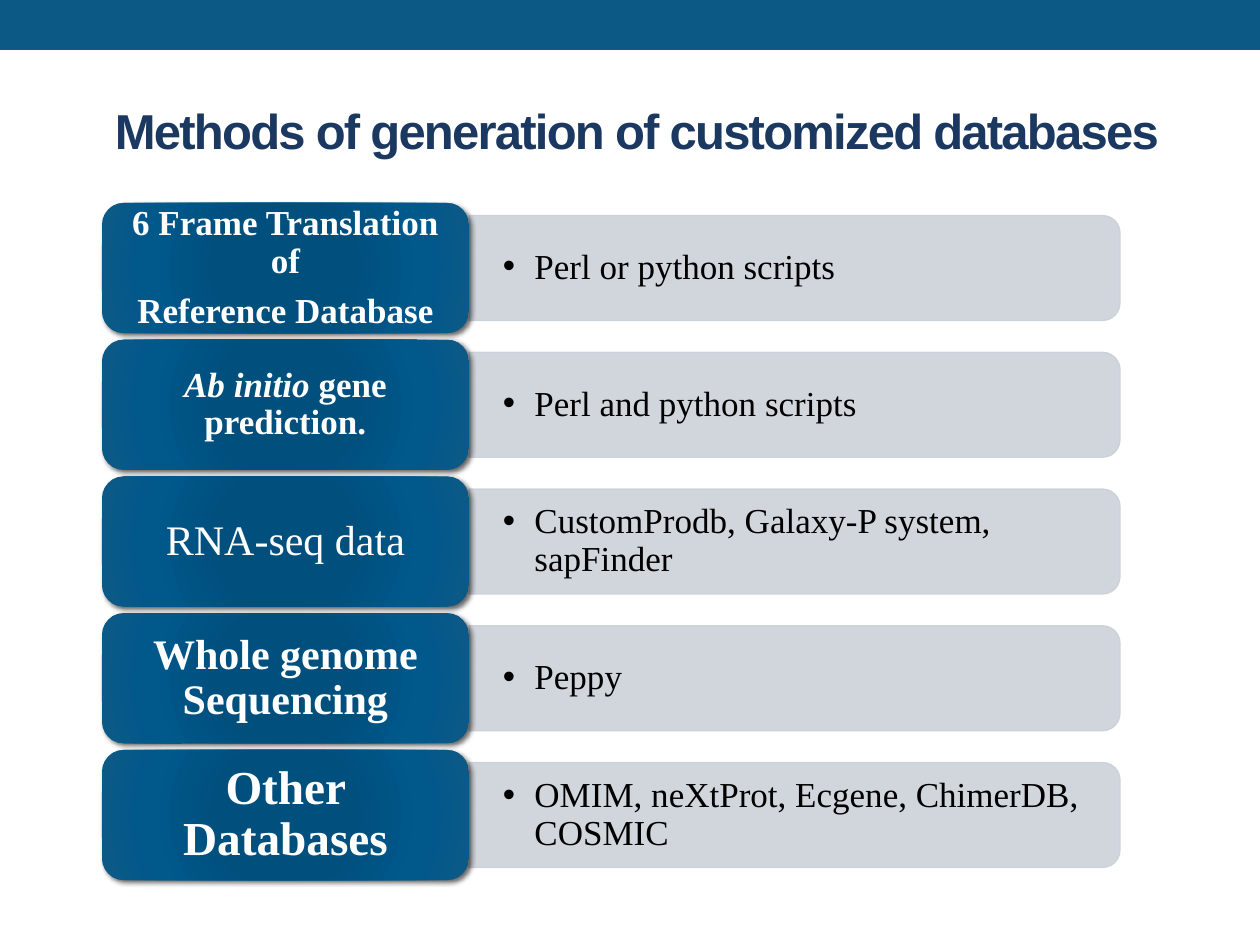
from lxml.etree import SubElement
from pptx import Presentation
from pptx.dml.color import RGBColor
from pptx.enum.shapes import MSO_SHAPE
from pptx.enum.text import MSO_ANCHOR, PP_ALIGN
from pptx.oxml import parse_xml
from pptx.oxml.ns import nsdecls, qn
from pptx.util import Emu, Pt

SCALE = 914400 / 126  # EMU in one px

BAR = RGBColor(0x0C, 0x59, 0x86)
TITLE = RGBColor(0x1B, 0x38, 0x61)
PANEL = RGBColor(0xCC, 0xD1, 0xD9)
WHITE = RGBColor(0xFF, 0xFF, 0xFF)
BLACK = RGBColor(0x00, 0x00, 0x00)
GRADIENT = [
    (0, RGBColor(0x00, 0x4F, 0x7D)),
    (34, RGBColor(0x00, 0x4F, 0x7D)),
    (70, RGBColor(0x00, 0x58, 0x8B)),
    (100, BAR),
]

SERIF = "Times New Roman"
BOLD = {"bold": True}
ITALIC = {"bold": True, "italic": True}
PLAIN = {}

# Row layout
LEFT, FIRST_TOP, ROW_PITCH = 102, 203, 136.75
LABEL_WIDTH, LABEL_HEIGHT = 367, 130
PANEL_WIDTH, PANEL_HEIGHT = 651, 105
PANEL_TEXT_WIDTH, PANEL_TEXT_HEIGHT = 646, 95

# Label size, label paragraphs as (text, format) runs, panel text
ROWS = [
    (20, [[("6 Frame Translation of", BOLD)], [("Reference Database", BOLD)]],
     "Perl or python scripts"),
    (20, [[("Ab initio", ITALIC), (" gene prediction.", BOLD)]],
     "Perl and python scripts"),
    (24, [[("RNA-seq data", PLAIN)]],
     "CustomProdb, Galaxy-P system, sapFinder"),
    (24, [[("Whole genome Sequencing", BOLD)]],
     "Peppy"),
    (27, [[("Other Databases", BOLD)]],
     "OMIM, neXtProt, Ecgene, ChimerDB, COSMIC"),
]


def px(value):
    return Emu(round(value * SCALE))


def box(*values):
    return [px(value) for value in values]


def set_values(target, values):
    for name, value in values.items():
        setattr(target, name, value)


def set_frame(frame, anchor, across, down):
    set_values(frame, {
        "word_wrap": True, "vertical_anchor": anchor,
        "margin_left": px(across), "margin_right": px(across),
        "margin_top": px(down), "margin_bottom": px(down),
    })


def add_run(paragraph, text, size, color, name=SERIF, **values):
    run = paragraph.add_run()
    run.text = text
    set_values(run.font, {"name": name, "size": Pt(size), **values})
    run.font.color.rgb = color
    return run


def add_filled(slide, kind, place, color):
    shape = slide.shapes.add_shape(kind, *box(*place))
    shape.shadow.inherit = False
    shape.fill.solid()
    shape.fill.fore_color.rgb = color
    shape.line.fill.background()
    return shape


def add_title(slide, text):
    title = slide.shapes.add_textbox(*box(102, 89, 1134, 136))
    set_frame(title.text_frame, MSO_ANCHOR.TOP, 13, 12)
    run = add_run(title.text_frame.paragraphs[0], text, 28, TITLE, "Arial", bold=True)
    run.font._element.set("spc", "-100")


def add_panel(slide, middle, text):
    # Tall shape turned a quarter, so its rounded end faces right
    left = LEFT + LABEL_WIDTH
    center = left + PANEL_WIDTH / 2
    place = (center - PANEL_HEIGHT / 2, middle - PANEL_WIDTH / 2, PANEL_HEIGHT, PANEL_WIDTH)
    panel = add_filled(slide, MSO_SHAPE.ROUND_2_SAME_RECTANGLE, place, PANEL)
    panel.rotation = 90
    panel.line.color.rgb = PANEL
    panel.line.width = Pt(0.75)
    for color in panel._element.spPr.iter(qn("a:srgbClr")):
        SubElement(color, qn("a:alpha"), val="90000")

    # Bulleted text
    text_box = slide.shapes.add_textbox(
        *box(left, middle - PANEL_TEXT_HEIGHT / 2, PANEL_TEXT_WIDTH, PANEL_TEXT_HEIGHT))
    set_frame(text_box.text_frame, MSO_ANCHOR.MIDDLE, 34, 18)
    paragraph = text_box.text_frame.paragraphs[0]
    set_values(paragraph, {"line_spacing": 0.9, "space_after": Pt(3)})
    properties = paragraph._p.get_or_add_pPr()
    properties.set("marL", "228600")
    properties.set("indent", "-228600")
    SubElement(properties, qn("a:buFont"), typeface="Arial")
    SubElement(properties, qn("a:buChar"), char="•")
    add_run(paragraph, text, 20, BLACK)


def add_gradient(shape):
    stops = "".join(
        f'<a:gs pos="{position * 1000}"><a:srgbClr val="{color}"/></a:gs>'
        for position, color in GRADIENT)
    gradient = parse_xml(
        f'<a:gradFill {nsdecls("a")} rotWithShape="1"><a:gsLst>{stops}</a:gsLst>'
        '<a:path path="circle"><a:fillToRect l="50000" t="50000" r="50000" b="50000"/>'
        '</a:path></a:gradFill>')
    properties = shape._element.spPr
    properties.replace(properties.find(qn("a:solidFill")), gradient)


def add_shadow(shape):
    effects = shape._element.spPr.find(qn("a:effectLst"))
    shadow = SubElement(effects, qn("a:outerShdw"), blurRad=str(Pt(3)), dist=str(Pt(2)),
                        dir="2700000", algn="tl", rotWithShape="0")
    color = SubElement(shadow, qn("a:srgbClr"), val="000000")
    SubElement(color, qn("a:alpha"), val="60000")


def add_label(slide, top, size, paragraphs):
    label = add_filled(slide, MSO_SHAPE.ROUNDED_RECTANGLE,
                       (LEFT, top, LABEL_WIDTH, LABEL_HEIGHT), BAR)
    add_gradient(label)
    add_shadow(label)
    frame = label.text_frame
    set_frame(frame, MSO_ANCHOR.MIDDLE, size // 2, size // 4)
    for index, runs in enumerate(paragraphs):
        paragraph = frame.add_paragraph() if index else frame.paragraphs[0]
        set_values(paragraph, {"alignment": PP_ALIGN.CENTER, "line_spacing": 0.9,
                               "space_after": Pt(round(size * 0.35))})
        for text, values in runs:
            add_run(paragraph, text, size, WHITE, **values)


def main():
    presentation = Presentation()
    presentation.slide_width, presentation.slide_height = box(1260, 945)
    slide = presentation.slides.add_slide(presentation.slide_layouts[6])

    # Top bar and title
    add_filled(slide, MSO_SHAPE.RECTANGLE, (0, 0, 1260, 50), BAR)
    add_title(slide, "Methods of generation of customized databases")

    # One label and panel for each method
    for index, (size, paragraphs, text) in enumerate(ROWS):
        top = FIRST_TOP + index * ROW_PITCH
        add_panel(slide, top + LABEL_HEIGHT / 2, text)
        add_label(slide, top, size, paragraphs)

    presentation.save("out.pptx")


if __name__ == "__main__":
    main()
